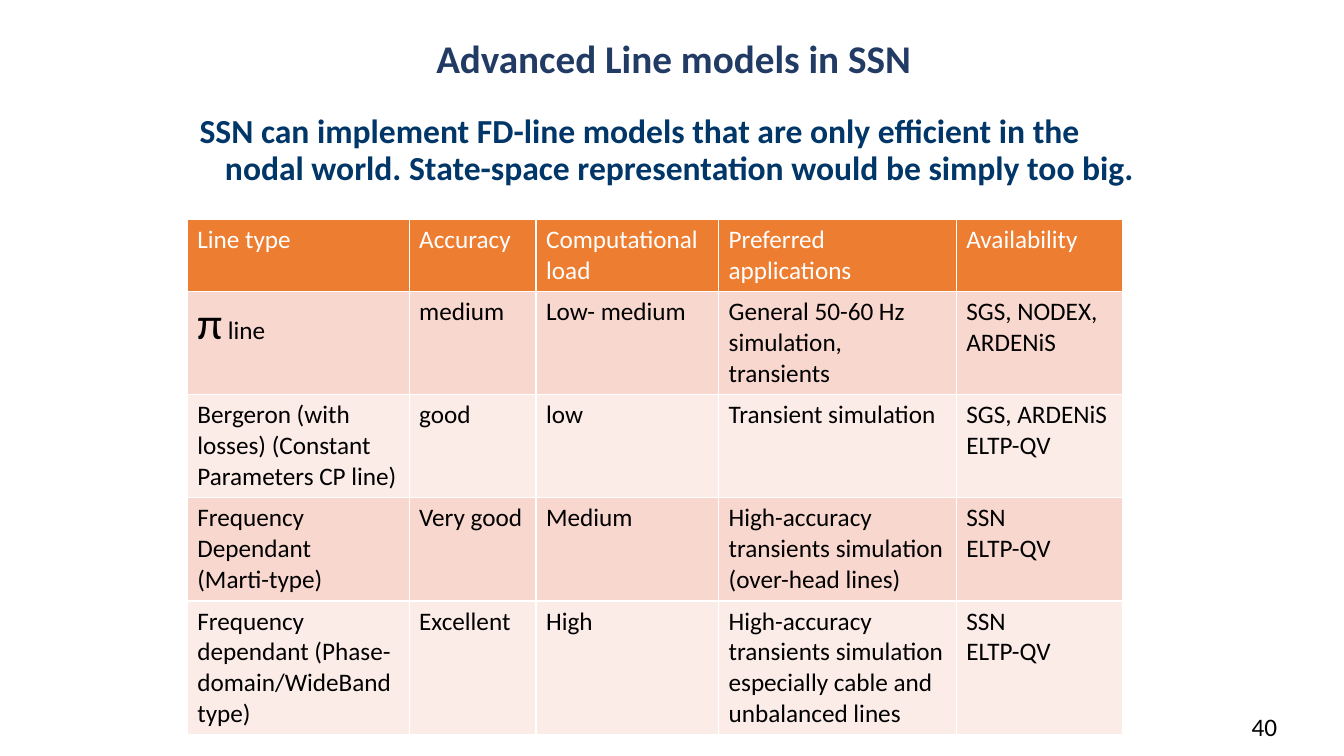
"""Build the slide on advanced line models in SSN."""
from pptx import Presentation
from pptx.dml.color import RGBColor
from pptx.enum import text as tx
from pptx.oxml import parse_xml
from pptx.oxml.ns import nsdecls
from pptx.util import Cm, Pt

TITLE = "Advanced Line models in SSN"
LEAD = ("SSN can implement FD-line models that are only efficient in the nodal world. "
        "State-space representation would be simply too big.")
NUMBER = "40"
ROWS = [
    ["Line type", "Accuracy", "Computational load", "Preferred applications", "Availability"],
    ["π line", "medium", "Low- medium", "General 50-60 Hz simulation, transients",
     "SGS, NODEX, ARDENiS"],
    ["Bergeron (with losses) (Constant Parameters CP line)", "good", "low",
     "Transient simulation", "SGS, ARDENiS\nELTP-QV"],
    ["Frequency Dependant\v(Marti-type)", "Very good", "Medium",
     "High-accuracy transients simulation (over-head lines)", "SSN\nELTP-QV"],
    ["Frequency dependant (Phase-domain/WideBand type)", "Excellent", "High",
     "High-accuracy transients simulation especially cable and unbalanced lines",
     "SSN\nELTP-QV"],
]
WIDTHS = [5.59, 3.2, 4.6, 5.99, 4.19]
HEIGHTS = [1.8, 2.6, 2.6, 2.6, 3.36]
HEAD, BANDS = "ED7D31", ["FCECE8", "F8D7CE"]
PLACES = {
    "title": (10.74, 0.53, 13.26, 2.01),
    "lead": (4.52, 2.51, 24.79, 2.59),
    "table": (4.72, 5.54, sum(WIDTHS), sum(HEIGHTS)),
    "number": (31.29, 17.81, 1.27, 1.02),
}
FRAME = {"word_wrap": True, "auto_size": tx.MSO_AUTO_SIZE.NONE,
         "vertical_anchor": tx.MSO_ANCHOR.MIDDLE}
PARA = {"alignment": tx.PP_ALIGN.LEFT, "line_spacing": 0.9, "space_before": Pt(0)}


def apply(item, values):
    for name, value in values.items():
        setattr(item, name, value)


def paint(fill, color):
    fill.solid()
    fill.fore_color.rgb = RGBColor.from_string(color)


def style(frame, size, color, bold=False):
    for para in frame.paragraphs:
        for run in para.runs:
            apply(run.font, {"name": "Calibri", "size": Pt(size), "bold": bold})
            paint(run.font.fill, color)


def place(name):
    return [Cm(n) for n in PLACES[name]]


def fill_text(shape, name, words, size, color):
    apply(shape, dict(zip(("left", "top", "width", "height"), place(name))))
    frame = shape.text_frame
    frame.text = words
    apply(frame, FRAME)
    apply(frame.paragraphs[0], PARA)
    style(frame, size, color, True)
    return frame


def add_grid(slide):
    grid = slide.shapes.add_table(len(ROWS), len(WIDTHS), *place("table")).table
    for col, width in zip(grid.columns, WIDTHS):
        col.width = Cm(width)
    for r, (row, height) in enumerate(zip(ROWS, HEIGHTS)):
        grid.rows[r].height = Cm(height)
        for c, words in enumerate(row):
            cell = grid.cell(r, c)
            cell.text = words
            paint(cell.fill, BANDS[r % 2] if r else HEAD)
            style(cell.text_frame, 18, "000000" if r else "FFFFFF")
    para = grid.cell(1, 0).text_frame.paragraphs[0]
    para.runs[0].text = "π"
    para.add_run().text = " line"
    style(grid.cell(1, 0).text_frame, 18, "000000")
    para.runs[0].font.size = Pt(32)


def main():
    deck = Presentation()
    apply(deck, {"slide_width": Cm(33.87), "slide_height": Cm(19.05)})
    slide = deck.slides.add_slide(deck.slide_layouts[1])
    fill_text(slide.shapes.title, "title", TITLE, 28, "223B64")
    lead = fill_text(slide.placeholders[1], "lead", LEAD, 24, "013668")
    lead.margin_left = Cm(0.51)
    props = lead.paragraphs[0]._p.get_or_add_pPr()
    apply(props, {"marL": Cm(0.64), "indent": Cm(-0.64)}) if hasattr(props, "marL") else None
    props.set("marL", str(Cm(0.64)))
    props.set("indent", str(Cm(-0.64)))
    props.append(parse_xml(f"<a:buNone {nsdecls('a')}/>"))
    add_grid(slide)
    frame = slide.shapes.add_textbox(*place("number")).text_frame
    frame.text = NUMBER
    frame.word_wrap = False
    style(frame, 18, "000000")
    deck.save("out.pptx")


if __name__ == "__main__":
    main()
